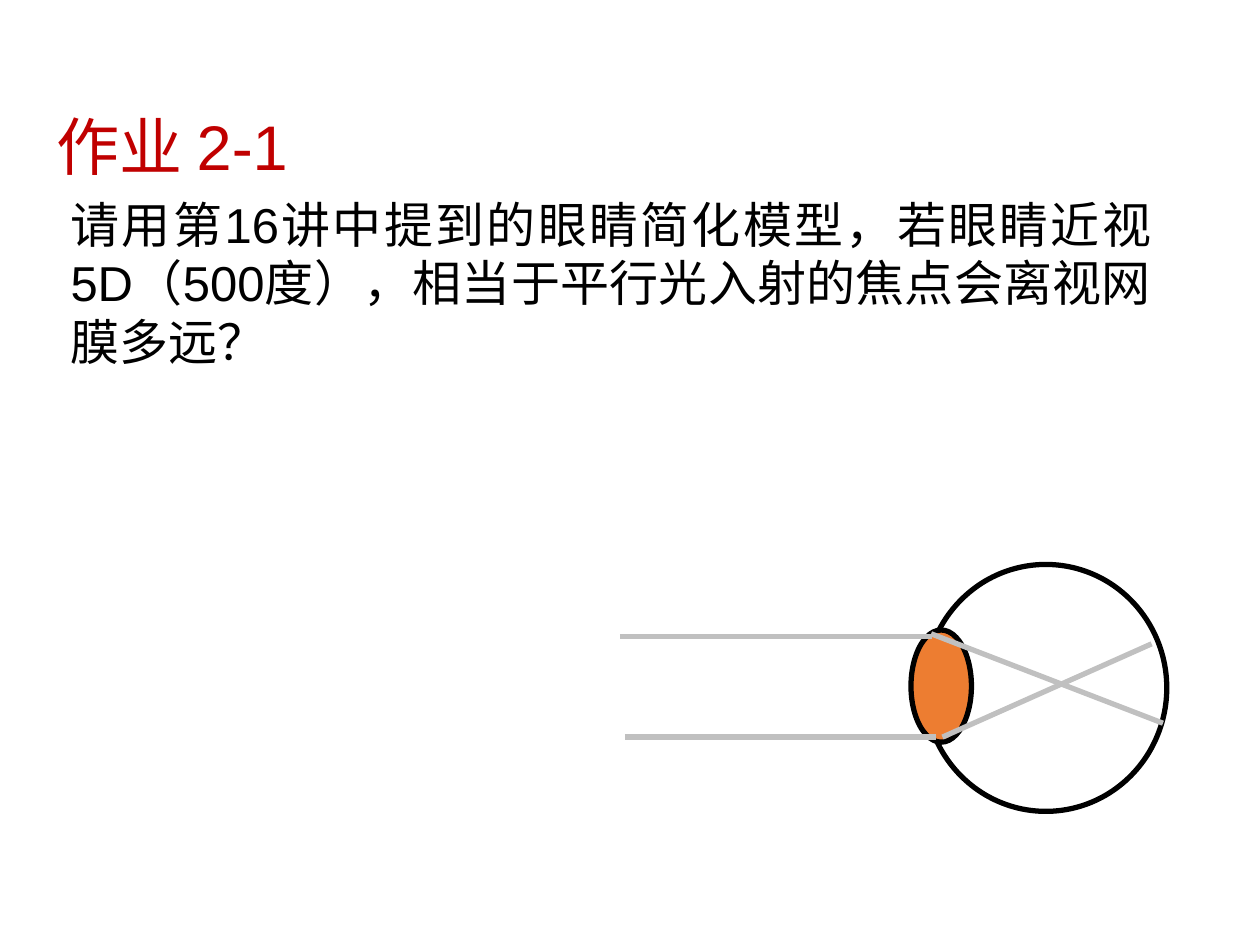
from pptx import Presentation
from pptx.dml.color import RGBColor
from pptx.enum.shapes import MSO_CONNECTOR, MSO_SHAPE
from pptx.enum.text import MSO_ANCHOR, PP_ALIGN
from pptx.oxml.ns import qn
from pptx.util import Inches, Pt
from lxml import etree

COLORS = {"title": "C00000", "body": "000000", "outline": "000000",
          "lens": "ED7D31", "ray": "C0C0C0"}


def color(name):
    return RGBColor.from_string(COLORS[name])


def add_text(box, runs, size, color_name, top_inset=0):
    frame = box.text_frame
    frame.word_wrap = True
    frame.margin_left = frame.margin_right = frame.margin_bottom = 0
    frame.margin_top = Inches(top_inset)
    paragraph = frame.paragraphs[0]
    for text in runs:
        run = paragraph.add_run()
        run.text = text
        run.font.size = Pt(size)
        run.font.name = "Arial"
        run.font.color.rgb = color(color_name)
    return paragraph


presentation = Presentation()
presentation.slide_width = Inches(10)
presentation.slide_height = Inches(7.5)
slide = presentation.slides.add_slide(presentation.slide_layouts[6])
shapes = slide.shapes

title = shapes.add_textbox(Inches(0.45), Inches(0.45), Inches(5.17), Inches(0.99))
title_paragraph = add_text(title, ["作业 ", "2-1"], 36, "title", 0.29)
title_paragraph.line_spacing = Pt(52.8)
title.text_frame.vertical_anchor = MSO_ANCHOR.MIDDLE

question = shapes.add_textbox(Inches(0.56), Inches(1.54), Inches(8.58), Inches(1.41))
question_paragraph = add_text(
    question,
    ["请用第16讲中提到的眼睛简化模型，若眼睛近视5D（500度），相当于平行光入射的焦点会离视网膜多远？"],
    28, "body")
question_paragraph.alignment = PP_ALIGN.JUSTIFY

eyeball = shapes.add_shape(MSO_SHAPE.OVAL, Inches(7.34), Inches(4.48),
                           Inches(1.92), Inches(1.96))
eyeball.fill.background()
lens = shapes.add_shape(MSO_SHAPE.OVAL, Inches(7.23), Inches(5),
                        Inches(0.48), Inches(0.89))
lens.fill.solid()
lens.fill.fore_color.rgb = color("lens")
for shape in (eyeball, lens):
    shape.shadow.inherit = False
    shape.line.color.rgb = color("outline")
    shape.line.width = Pt(3)

rays = [
    (4.92, 5.05, 7.4, 5.05),
    (7.39, 5.03, 9.23, 5.74),
    (7.48, 5.85, 9.14, 5.11),
    (4.96, 5.85, 7.43, 5.85),
]
for ends in rays:
    ray = shapes.add_connector(MSO_CONNECTOR.STRAIGHT, *map(Inches, ends))
    ray.line.color.rgb = color("ray")
    ray.line.width = Pt(3)
    etree.SubElement(ray._element.spPr, qn("a:effectLst"))

presentation.save("out.pptx")
